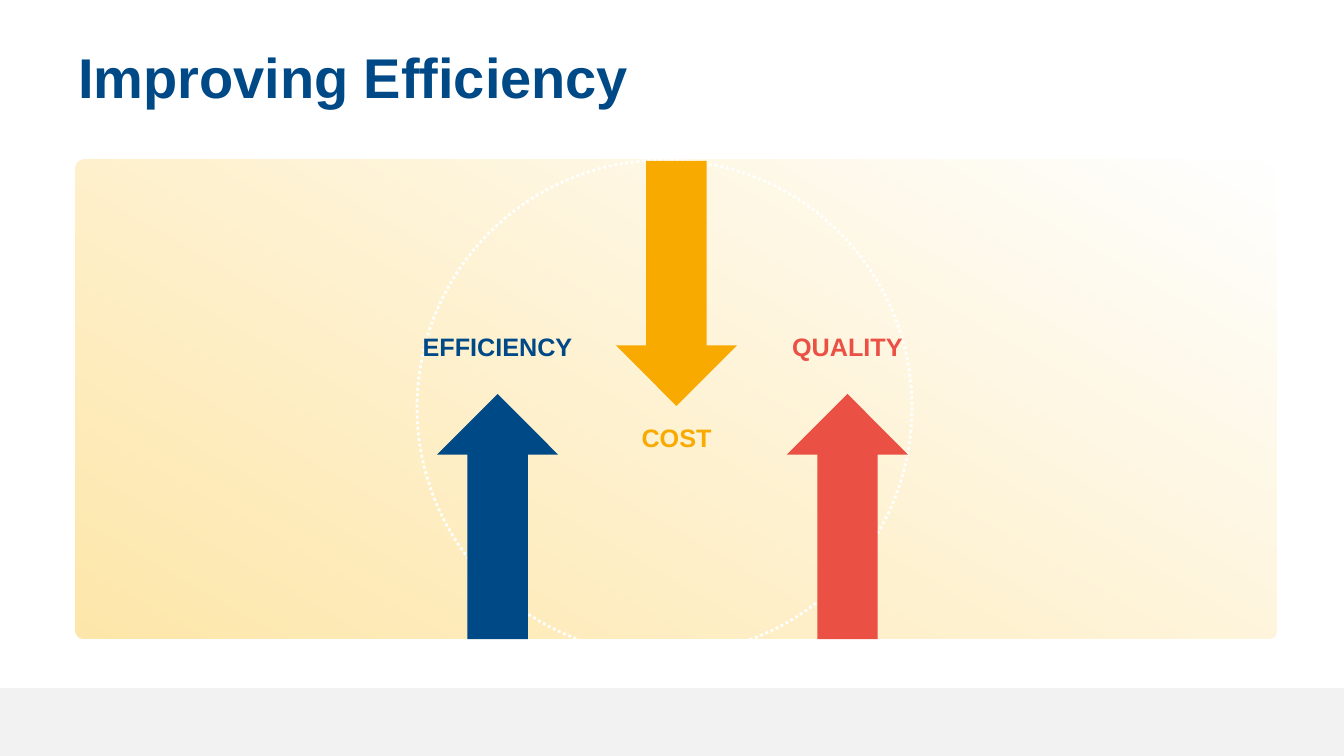
from lxml.etree import SubElement
from pptx import Presentation
from pptx.dml.color import RGBColor
from pptx.enum.dml import MSO_LINE
from pptx.enum.shapes import MSO_SHAPE
from pptx.enum.text import MSO_ANCHOR, MSO_AUTO_SIZE, PP_ALIGN
from pptx.oxml.ns import qn
from pptx.util import Pt

WIDTH, HEIGHT = 1344, 756
EMU_PER_PX = 12192000 / WIDTH
FONT = "Arial"
WHITE = RGBColor(0xFF, 0xFF, 0xFF)
FOOTER_GRAY = RGBColor(0xF2, 0xF2, 0xF2)
PALE_GOLD = RGBColor(0xFE, 0xD8, 0x74)
NAVY = RGBColor(0x00, 0x49, 0x87)
AMBER = RGBColor(0xF8, 0xAA, 0x00)
CORAL = RGBColor(0xEA, 0x50, 0x44)

LABEL_WIDTH, LABEL_HEIGHT = 281, 40
ARROW_WIDTH, ARROW_HEIGHT = 121, 245
TRENDS = [
    ("EFFICIENCY", NAVY, 497, 326, 394, 180),
    ("COST", AMBER, 676, 417, 161, 0),
    ("QUALITY", CORAL, 847, 326, 394, 180),
]


def px(length):
    return round(length * EMU_PER_PX)


class SlideBuilder:
    """Draws styled elements on the current slide in pixel units."""

    def __init__(self, presentation):
        self.slide = presentation.slides.add_slide(presentation.slide_layouts[5])

    def set_text(self, frame, text, size, color, align):
        frame.text = text
        paragraph = frame.paragraphs[0]
        paragraph.alignment = align
        font = paragraph.runs[0].font
        font.name, font.size, font.bold = FONT, Pt(size), True
        font.color.rgb = color
        return paragraph

    def title(self, text, left, top, width, height):
        heading = self.slide.shapes.title
        heading.left, heading.top = px(left), px(top)
        heading.width, heading.height = px(width), px(height)
        frame = heading.text_frame
        frame.word_wrap = True
        frame.auto_size = MSO_AUTO_SIZE.NONE
        frame.vertical_anchor = MSO_ANCHOR.TOP
        paragraph = self.set_text(frame, text, 40, NAVY, PP_ALIGN.LEFT)
        paragraph.line_spacing = Pt(46)

    def label(self, text, color, left, top, width, height):
        box = self.slide.shapes.add_textbox(px(left), px(top), px(width), px(height))
        frame = box.text_frame
        frame.word_wrap = True
        frame.auto_size = MSO_AUTO_SIZE.SHAPE_TO_FIT_TEXT
        self.set_text(frame, text, 18, color, PP_ALIGN.CENTER)

    def shape(self, kind, left, top, width, height, color=None):
        drawn = self.slide.shapes.add_shape(kind, px(left), px(top), px(width), px(height))
        drawn.shadow.inherit = False
        drawn.line.fill.background()
        if color is None:
            drawn.fill.background()
        else:
            drawn.fill.solid()
            drawn.fill.fore_color.rgb = color
        return drawn

    def fading_panel(self, left, top, width, height, color, opacities):
        panel = self.shape(MSO_SHAPE.ROUNDED_RECTANGLE, left, top, width, height)
        panel.adjustments[0] = 0.017
        panel.fill.gradient()
        panel.fill.gradient_angle = 240
        for stop in panel.fill.gradient_stops:
            stop.color.rgb = color
        tints = panel.element.spPr.iter(qn("a:srgbClr"))
        for tint, opacity in zip(list(tints), opacities):
            SubElement(tint, qn("a:alpha"), val=str(opacity * 1000))

    def dotted_circle(self, left, top, diameter):
        circle = self.shape(MSO_SHAPE.OVAL, left, top, diameter, diameter)
        circle.line.color.rgb = WHITE
        circle.line.width = Pt(2)
        circle.line.dash_style = MSO_LINE.ROUND_DOT

    def arrow(self, color, left, top, rotation):
        arrow = self.shape(MSO_SHAPE.DOWN_ARROW, left, top, ARROW_WIDTH, ARROW_HEIGHT, color)
        arrow.rotation = rotation


def main():
    presentation = Presentation()
    presentation.slide_width, presentation.slide_height = px(WIDTH), px(HEIGHT)
    builder = SlideBuilder(presentation)
    builder.title("Improving Efficiency", 68, 40, 1234, 146)
    builder.shape(MSO_SHAPE.RECTANGLE, 0, 688, WIDTH, HEIGHT - 688, FOOTER_GRAY)
    builder.fading_panel(75, 160, 1201, 479, PALE_GOLD, (0, 62))
    builder.dotted_circle(417, 160, 495)
    for name, color, center, label_top, arrow_top, rotation in TRENDS:
        builder.label(name, color, center - LABEL_WIDTH // 2, label_top, LABEL_WIDTH, LABEL_HEIGHT)
        builder.arrow(color, center - ARROW_WIDTH // 2, arrow_top, rotation)
    presentation.save("out.pptx")


if __name__ == "__main__":
    main()
